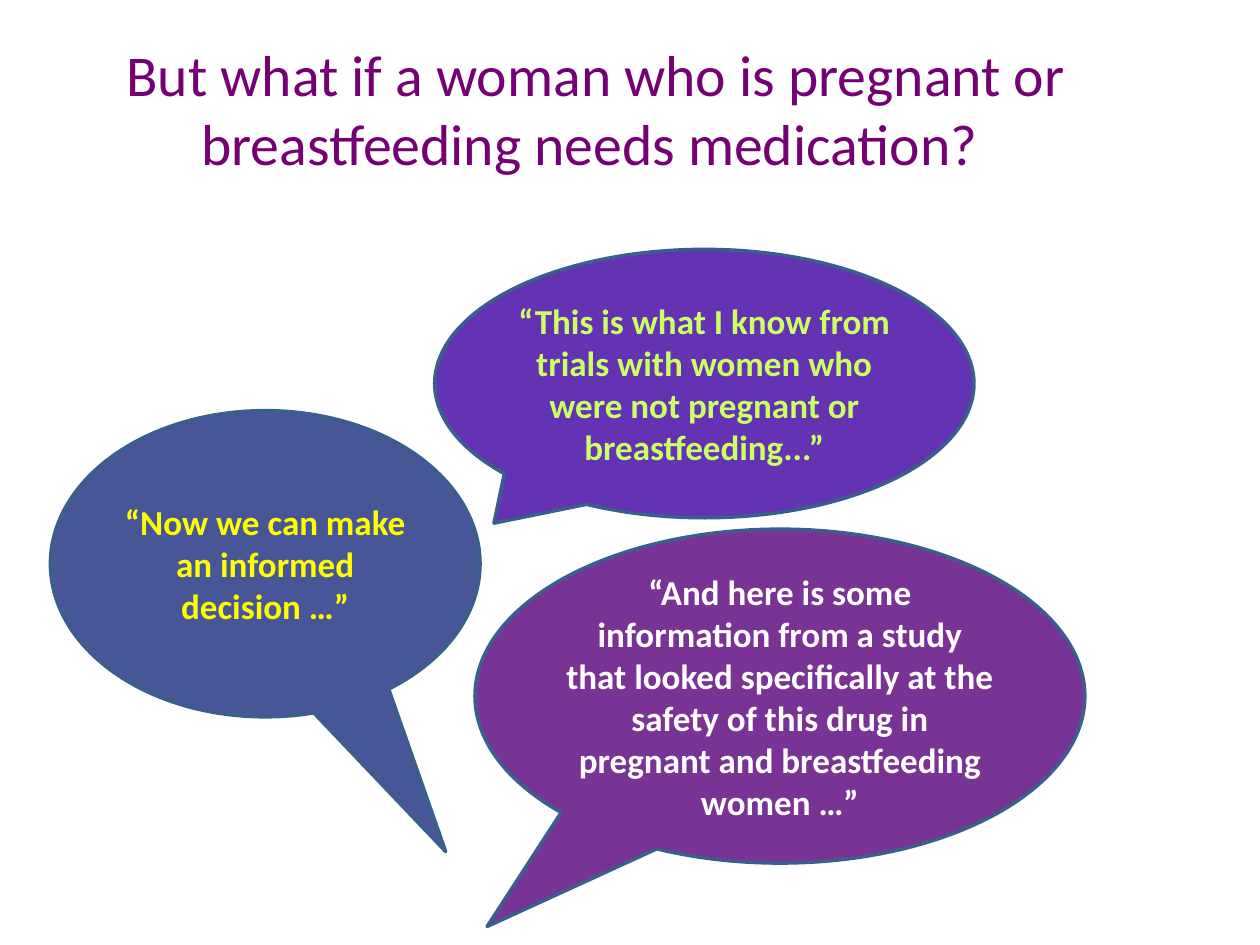
from pptx import Presentation
from pptx import util as u
from pptx.dml.color import RGBColor
from pptx.enum import shapes, text

PLUM = RGBColor(0x74, 0x00, 0x74)
VIOLET = RGBColor(0x63, 0x33, 0xB3)
PURPLE = RGBColor(0x79, 0x33, 0x95)
BLUE = RGBColor(0x47, 0x56, 0x97)
OUTLINE = RGBColor(0x3A, 0x5F, 0x8C)
LIME = RGBColor(0xCC, 0xFF, 0x66)
WHITE = RGBColor(0xFF, 0xFF, 0xFF)
YELLOW = RGBColor(0xFF, 0xFF, 0x00)


def add_text(sp, words, size, color, bold=False):
    tf = sp.text_frame
    tf.word_wrap = True
    tf.vertical_anchor = text.MSO_ANCHOR.MIDDLE
    p = tf.paragraphs[0]
    p.alignment = text.PP_ALIGN.CENTER
    r = p.add_run()
    r.text = words
    r.font.name = "Calibri"
    r.font.size = u.Pt(size)
    r.font.bold = bold
    r.font.color.rgb = color
    return tf


prs = Presentation()
prs.slide_width = u.Inches(10)
prs.slide_height = u.Inches(7.5)
s = prs.slides.add_slide(prs.slide_layouts[6])

title = s.shapes.add_textbox(u.Inches(0.23), u.Inches(0.23), u.Inches(9), u.Inches(1.25))
add_text(title, "But what if a woman who is pregnant or breastfeeding needs medication? ", 33, PLUM)

bubbles = [
    ((3.45, 1.98, 4.28, 2.13), (-0.39, 0.52), VIOLET, LIME,
     "“This is what I know from trials with women who were not pregnant or breastfeeding...”"),
    ((3.77, 4.2, 4.84, 2.65), (-0.48, 0.69), PURPLE, WHITE,
     "“And here is some information from a study that looked specifically at the safety "
     "of this drug in pregnant and breastfeeding women …”"),
    ((0.4, 3.26, 3.41, 2.43), (0.42, 0.94), BLUE, YELLOW,
     "“Now we can make an informed decision …”"),
]
for box, tail, fill, color, words in bubbles:
    sp = s.shapes.add_shape(shapes.MSO_SHAPE.OVAL_CALLOUT, *[u.Inches(v) for v in box])
    sp.adjustments[0], sp.adjustments[1] = tail
    sp.shadow.inherit = False
    sp.fill.solid()
    sp.fill.fore_color.rgb = fill
    sp.line.color.rgb = OUTLINE
    sp.line.width = u.Pt(2)
    tf = add_text(sp, words, 20, color, bold=True)
    tf.margin_left = tf.margin_right = tf.margin_top = tf.margin_bottom = u.Inches(0)

prs.save("out.pptx")
